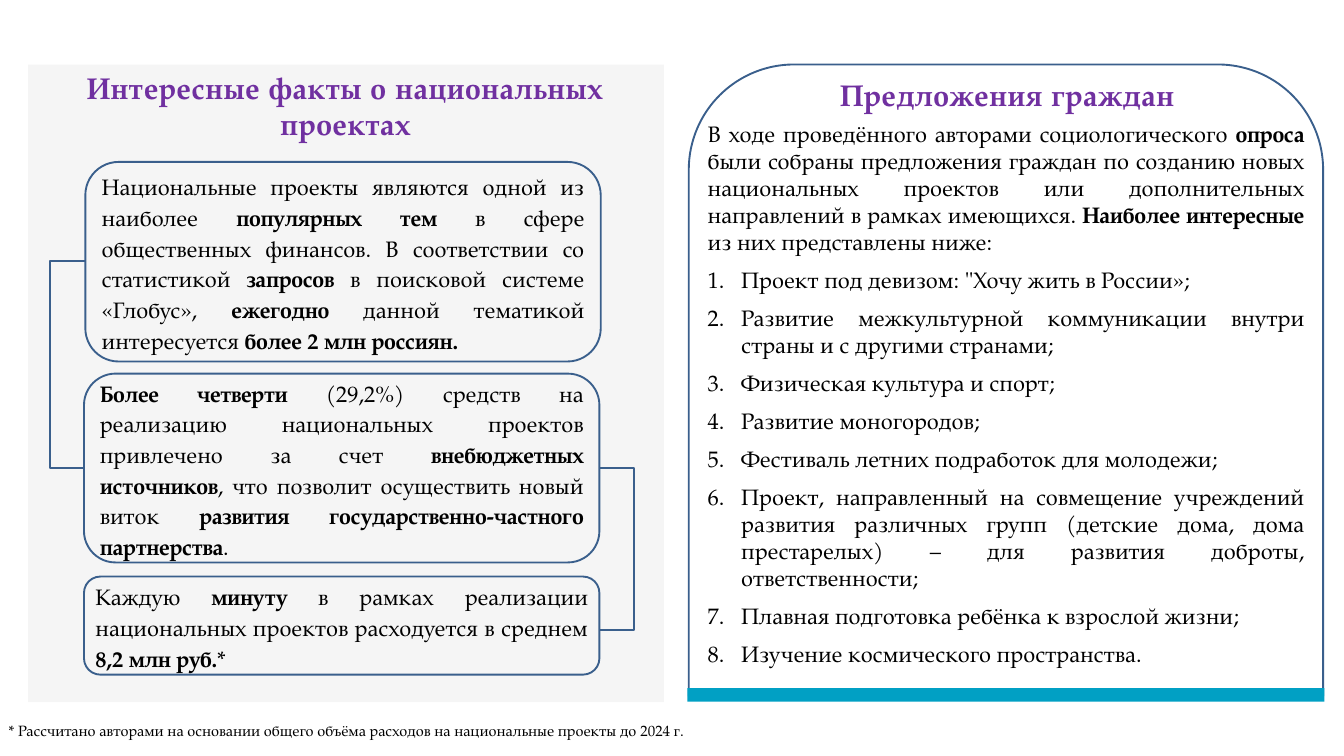
from lxml import etree
from pptx import Presentation
from pptx import util as u
from pptx.dml.color import RGBColor
from pptx.enum import shapes, text
from pptx.oxml import ns

PX = 9144  # EMU per px: 100 px to the inch
FONT = "TeX Gyre Pagella"
BLACK = RGBColor(0x00, 0x00, 0x00)
WHITE = RGBColor(0xFF, 0xFF, 0xFF)
INK = RGBColor(0x19, 0x19, 0x19)
PURPLE = RGBColor(0x70, 0x30, 0xA0)
OUTLINE = RGBColor(0x3A, 0x5F, 0x8C)
TEAL = RGBColor(0x01, 0xA0, 0xC4)

# Bold words stand between double asterisks.
FACTS = [
    ((127, 241, 767, 297),
     "Национальные проекты являются одной из наиболее **популярных тем **в сфере "
     "общественных финансов. В соответствии со статистикой **запросов** в поисковой "
     "системе «Глобус», **ежегодно** данной тематикой интересуется "
     "**более 2 млн россиян.**"),
    ((125, 556, 767, 281),
     "**Более четверти **(29,2%) средств на реализацию национальных проектов привлечено "
     "за счет **внебюджетных источников**, что позволит осуществить новый виток "
     "**развития государственно-частного партнерства**."),
    ((125, 858, 767, 146),
     "Каждую **минуту** в рамках реализации национальных проектов расходуется "
     "в среднем **8,2 млн руб.***"),
]
SURVEY = (
    "В ходе проведённого авторами социологического **опроса** были собраны предложения "
    "граждан по созданию новых национальных проектов или дополнительных направлений "
    "в рамках имеющихся. **Наиболее интересные **из них представлены ниже:")
PROPOSALS = [
    "Проект под девизом: \"Хочу жить в России»;",
    "Развитие межкультурной коммуникации внутри страны и с другими странами;",
    "Физическая культура и спорт;",
    "Развитие моногородов;",
    "Фестиваль летних подработок для молодежи;",
    "Проект, направленный на совмещение учреждений развития различных групп "
    "(детские дома, дома престарелых) – для развития доброты, ответственности;",
    "Плавная подготовка ребёнка к взрослой жизни;",
    "Изучение космического пространства.",
]


def px(*lengths):
    return [u.Emu(length * PX) for length in lengths]


class Slide:
    def __init__(self, page):
        self.page = page

    def style(self, shape, fill=None, line=None, alpha=None):
        shape.shadow.inherit = False
        if fill is None:
            shape.fill.background()
        else:
            shape.fill.solid()
            shape.fill.fore_color.rgb = fill
        if alpha is not None:
            color = shape.fill._xPr.find(".//" + ns.qn("a:srgbClr"))
            etree.SubElement(color, ns.qn("a:alpha"), val=str(alpha * 1000))
        if line is None:
            shape.line.fill.background()
        else:
            shape.line.color.rgb = line
            shape.line.width = u.Pt(2)

    def panel(self, kind, at, **look):
        shape = self.page.shapes.add_shape(kind, *px(*at))
        self.style(shape, **look)
        return shape

    def set_words(self, para, words, size=24, color=BLACK, align=text.PP_ALIGN.JUSTIFY,
                  leading=1.0, after=0, tracking=None):
        """Fill a paragraph, switching bold on and off at each double asterisk."""
        para.alignment = align
        para.line_spacing = leading
        para.space_before, para.space_after = u.Pt(0), u.Pt(after)
        para.font.name, para.font.size = FONT, u.Pt(size)
        para.font.color.rgb = color
        for index, part in enumerate(words.split("**")):
            if part:
                span = para.add_run()
                span.text = part
                span.font.bold = index % 2 == 1
                if tracking:
                    span._r.get_or_add_rPr().set("spc", str(tracking))

    def place(self, box, at, inset=(10, 5)):
        """Move a text shape to the front and lay it out from its top."""
        box.left, box.top, box.width, box.height = px(*at)
        self.page.shapes._spTree.append(box._element)
        frame = box.text_frame
        frame.word_wrap = True
        frame.auto_size = text.MSO_AUTO_SIZE.NONE
        frame.vertical_anchor = text.MSO_ANCHOR.TOP
        frame.margin_left, frame.margin_top = px(*inset)
        frame.margin_right, frame.margin_bottom = px(*inset)
        return frame

    def heading(self, box, at, words):
        frame = self.place(box, at, inset=(0, 0))
        self.set_words(frame.paragraphs[0], f"**{words}**", size=32, color=PURPLE,
                       align=text.PP_ALIGN.CENTER, tracking=110)

    def textbox(self):
        return self.page.shapes.add_textbox(0, 0, 0, 0)

    def fact(self, at, words):
        box = self.panel(shapes.MSO_SHAPE.ROUNDED_RECTANGLE, at, line=OUTLINE)
        box.text_frame.word_wrap = True
        box.text_frame.vertical_anchor = text.MSO_ANCHOR.MIDDLE
        self.set_words(box.text_frame.paragraphs[0], words, leading=1.14)

    def bracket(self, start, end, reach):
        """Join two box sides by a three-part line bent at x = reach."""
        points = [px(*point) for point in ((reach, start[1]), (reach, end[1]), end)]
        builder = self.page.shapes.build_freeform(*px(*start))
        builder.add_line_segments(points, close=False)
        self.style(builder.convert_to_shape(), line=OUTLINE)

    def numbered(self, box, at, intro, items):
        frame = self.place(box, at)
        for index, words in enumerate([intro, *items]):
            para = frame.paragraphs[0] if index == 0 else frame.add_paragraph()
            props = para._p.get_or_add_pPr()
            indent = px(50)[0] if index else 0
            props.set("marL", str(indent))
            props.set("indent", str(-indent))
            if index:
                etree.SubElement(props, ns.qn("a:buFont"), typeface=FONT)
                etree.SubElement(props, ns.qn("a:buAutoNum"), type="arabicPeriod")
            else:
                etree.SubElement(props, ns.qn("a:buNone"))
            self.set_words(para, words, after=12)

    def footnote(self, at, words):
        frame = self.place(self.textbox(), at)
        frame.word_wrap = False
        self.set_words(frame.paragraphs[0], words, size=16, align=text.PP_ALIGN.LEFT)


def main():
    deck = Presentation()
    deck.slide_width, deck.slide_height = px(2000, 1125)
    page = deck.slides.add_slide(deck.slide_layouts[1])
    title, body = page.placeholders
    slide = Slide(page)

    slide.panel(shapes.MSO_SHAPE.ROUND_2_SAME_RECTANGLE, (1025, 96, 944, 940),
                fill=WHITE, line=OUTLINE)
    slide.panel(shapes.MSO_SHAPE.RECTANGLE, (42, 96, 946, 949), fill=INK, alpha=4)
    slide.panel(shapes.MSO_SHAPE.RECTANGLE, (1023, 1024, 948, 20), fill=TEAL)

    slide.heading(title, (112, 104, 804, 108), "Интересные факты о национальных проектах")
    for at, words in FACTS:
        slide.fact(at, words)
    slide.bracket((127, 388), (125, 696), reach=74)
    slide.bracket((892, 696), (892, 938), reach=943)

    slide.heading(slide.textbox(), (1189, 114, 619, 54), "Предложения граждан")
    slide.numbered(body, (1043, 174, 908, 889), SURVEY, PROPOSALS)
    slide.footnote((3, 1069, 1064, 37),
                   "* Рассчитано авторами на основании общего объёма расходов "
                   "на национальные проекты до 2024 г.")
    deck.save("out.pptx")


if __name__ == "__main__":
    main()
